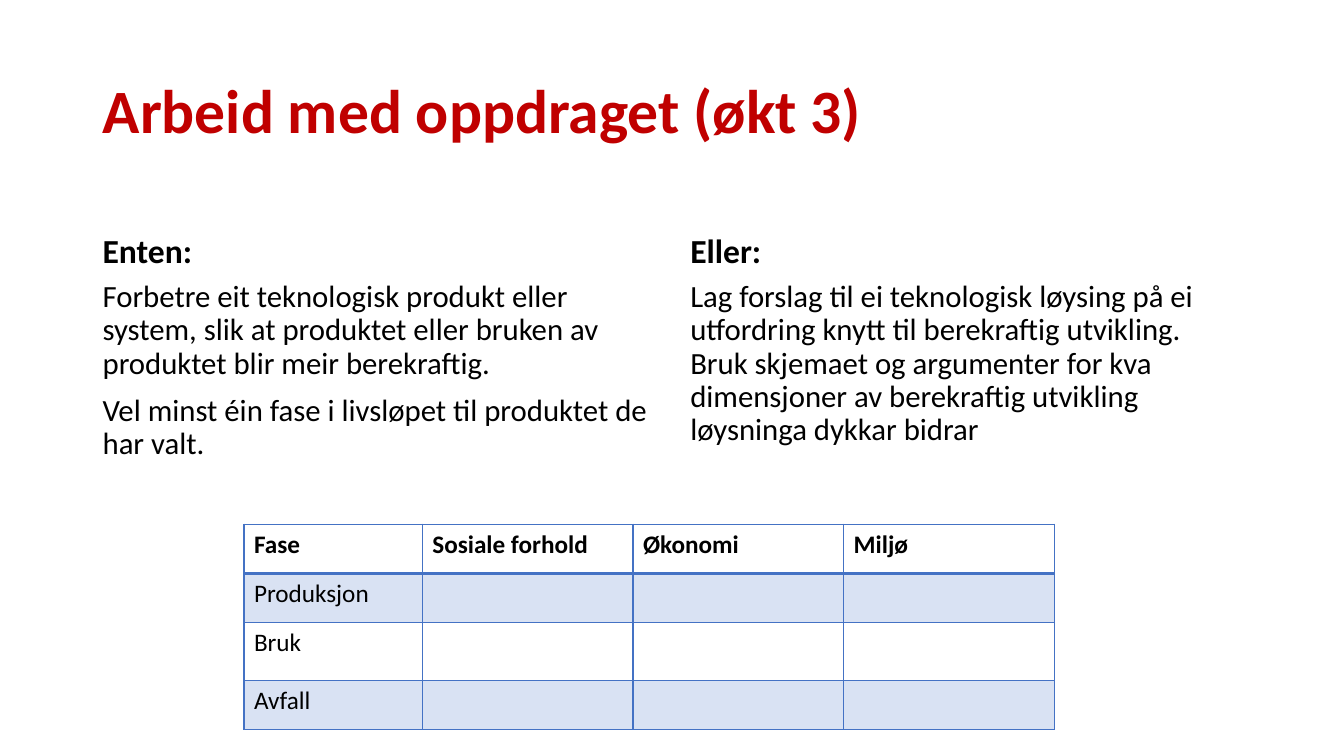
from lxml import etree
from pptx import Presentation
from pptx.dml.color import RGBColor
from pptx.enum.text import MSO_ANCHOR
from pptx.oxml.ns import qn
from pptx.util import Pt

TOP, MIDDLE, BOTTOM = MSO_ANCHOR.TOP, MSO_ANCHOR.MIDDLE, MSO_ANCHOR.BOTTOM
TITLE_ONLY = 5

TITLE = "Arbeid med oppdraget (økt 3)"
# left, width, heading, paragraphs
CHOICES = [
    (66.24, 406.08, "Enten:", [
        "Forbetre eit teknologisk produkt eller system, slik at produktet "
        "eller bruken av produktet blir meir berekraftig.",
        "Vel minst éin fase i livsløpet til produktet de har valt.",
    ]),
    (486, 408.24, "Eller:", [
        "Lag forslag til ei teknologisk løysing på ei utfordring knytt til "
        "berekraftig utvikling. Bruk skjemaet og argumenter for kva "
        "dimensjoner av berekraftig utvikling løysninga dykkar bidrar",
    ]),
]
PHASES = [
    ["Fase", "Sosiale forhold", "Økonomi", "Miljø"],
    ["Produksjon", "", "", ""],
    ["Bruk", "", "", ""],
    ["Avfall", "", "", ""],
]
TABLE_LEFT, TABLE_TOP = 174.24, 374.4
COLUMN_WIDTHS = [127.44, 150.48, 150.48, 150.48]
ROW_HEIGHTS = [35.28, 35.28, 41.04, 35.28]

BLACK, RED, BLUE = "000000", "C00000", "4472C4"
BAND_ALPHA = "20000"
TITLE_FONT = {"name": "Calibri", "size": Pt(44), "bold": True}
HEADING_FONT = {"name": "Calibri", "size": Pt(24), "bold": True}
BODY_FONT = {"name": "Calibri", "size": Pt(22), "bold": False}
CELL_FONT = {"name": "Calibri", "size": Pt(18), "bold": False}
HEADER_FONT = {**CELL_FONT, "bold": True}
TIGHT = {"line_spacing": 0.9}
SPACED = {**TIGHT, "space_before": Pt(10)}


def colour(value):
    return RGBColor.from_string(value)


def apply(target, values):
    for name, value in values.items():
        setattr(target, name, value)


def write(frame, lines, font, ink, spacing):
    for index, line in enumerate(lines):
        para = frame.add_paragraph() if index else frame.paragraphs[0]
        apply(para, spacing)
        span = para.add_run()
        span.text = line
        apply(span.font, font)
        span.font.color.rgb = colour(ink)


def add_text(page, bounds, lines, font, anchor):
    box = page.shapes.add_textbox(*map(Pt, bounds))
    apply(box.text_frame, {"word_wrap": True, "vertical_anchor": anchor})
    write(box.text_frame, lines, font, BLACK, SPACED)


def add_borders(cell, widths):
    """Draw the cell's sides; widths maps a side letter to points."""
    properties = cell._tc.get_or_add_tcPr()
    for side, width in widths.items():
        line = etree.SubElement(properties, qn(f"a:ln{side}"), w=str(Pt(width)))
        fill = etree.SubElement(line, qn("a:solidFill"))
        etree.SubElement(fill, qn("a:srgbClr"), val=BLUE)


def fill_band(cell):
    cell.fill.solid()
    cell.fill.fore_color.rgb = colour(BLUE)
    tint = cell._tc.tcPr.find(qn("a:solidFill")).find(qn("a:srgbClr"))
    etree.SubElement(tint, qn("a:alpha"), val=BAND_ALPHA)


def add_phase_table(page):
    frame = page.shapes.add_table(
        len(PHASES), len(COLUMN_WIDTHS), Pt(TABLE_LEFT), Pt(TABLE_TOP),
        Pt(sum(COLUMN_WIDTHS)), Pt(sum(ROW_HEIGHTS)))
    table = frame.table
    apply(table, {"first_row": False, "horz_banding": False})
    for column, width in zip(table.columns, COLUMN_WIDTHS):
        column.width = Pt(width)
    for row, height in zip(table.rows, ROW_HEIGHTS):
        row.height = Pt(height)
    for row, texts in enumerate(PHASES):
        font = CELL_FONT if row else HEADER_FONT
        widths = {"L": 1, "R": 1, "T": 2 if row == 1 else 1, "B": 1 if row else 2}
        for column, text in enumerate(texts):
            cell = table.cell(row, column)
            add_borders(cell, widths)
            if row % 2:
                fill_band(cell)
            else:
                cell.fill.background()
            if text:
                write(cell.text_frame, [text], font, BLACK, {})
            else:
                apply(cell.text_frame.paragraphs[0].font, font)


def main():
    deck = Presentation()
    apply(deck, {"slide_width": Pt(960), "slide_height": Pt(540)})
    page = deck.slides.add_slide(deck.slide_layouts[TITLE_ONLY])

    title = page.shapes.title
    apply(title, {"left": Pt(66.24), "top": Pt(28.8),
                  "width": Pt(828), "height": Pt(104.4)})
    apply(title.text_frame, {"word_wrap": True, "vertical_anchor": MIDDLE})
    write(title.text_frame, [TITLE], TITLE_FONT, RED, TIGHT)
    title.text_frame.paragraphs[0].alignment = 1

    for left, width, heading, lines in CHOICES:
        add_text(page, (left, 132.48, width, 64.8), [heading], HEADING_FONT, BOTTOM)
        add_text(page, (left, 197.28, width, 290.16), lines, BODY_FONT, TOP)

    add_phase_table(page)
    deck.save("out.pptx")


if __name__ == "__main__":
    main()
